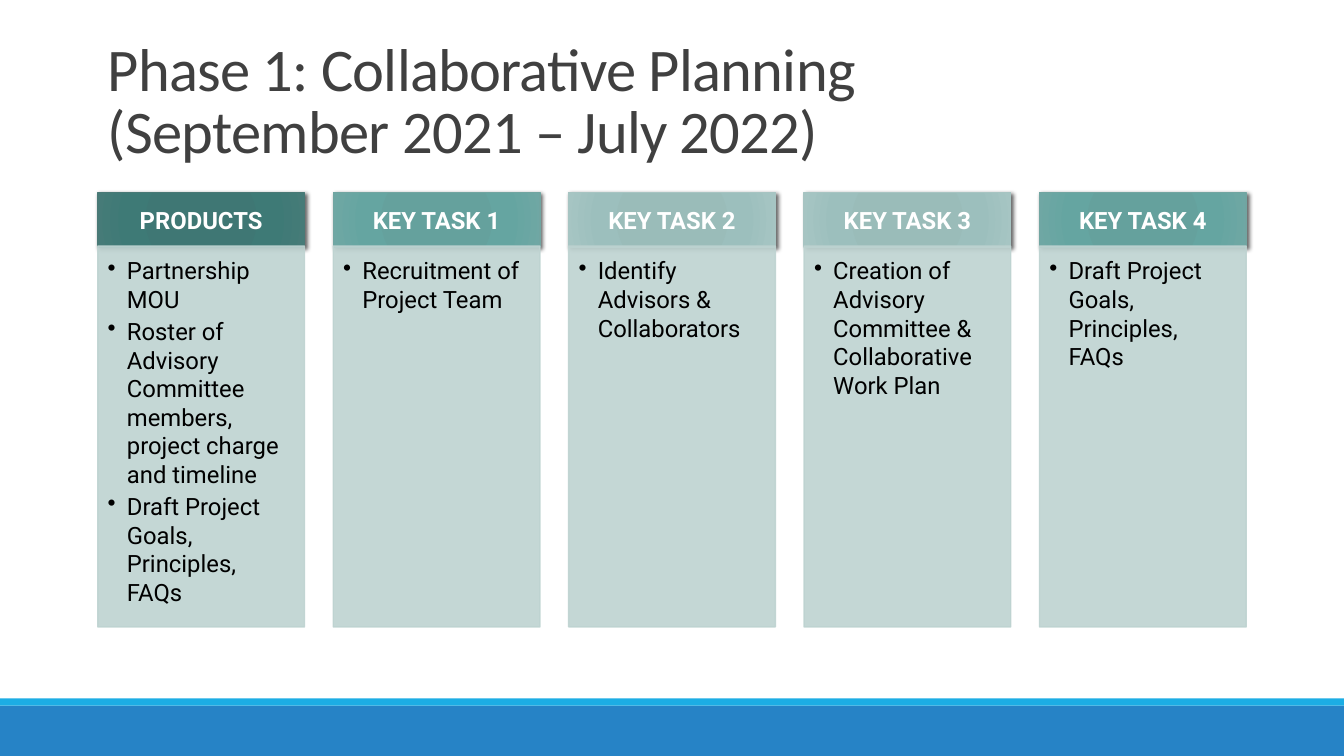
import pptx
import pptx.util
import pptx.dml.color
import pptx.enum.shapes
import pptx.enum.text
import pptx.oxml
import pptx.oxml.ns

Inches, Pt = pptx.util.Inches, pptx.util.Pt
Align, Anchor = pptx.enum.text.PP_ALIGN, pptx.enum.text.MSO_ANCHOR

TITLE = ["Phase 1: Collaborative Planning", "(September 2021 – July 2022)"]
COLUMNS = [
    ("PRODUCTS", "dark", [
        "Partnership MOU",
        "Roster of Advisory Committee members, project charge and timeline",
        "Draft Project Goals, Principles, FAQs"]),
    ("KEY TASK 1", "mid", ["Recruitment of Project Team"]),
    ("KEY TASK 2", "light", ["Identify Advisors & Collaborators"]),
    ("KEY TASK 3", "light", [
        "Creation of Advisory Committee & Collaborative Work Plan"]),
    ("KEY TASK 4", "mid", ["Draft Project Goals, Principles, FAQs"]),
]
BANDS = [(7, 0.5, "2683C6"), (6.93, 0.07, "1CADE4")]

THEME = {
    "title": {"font": "Calibri", "size": 43.2, "color": "404040"},
    "head": {"font": "Roboto", "size": 17, "color": "FFFFFF", "bold": True},
    "body": {"font": "Roboto", "size": 17, "color": "000000"},
    "panel": "BED3D1",
    "stops": (0, 34, 70, 100),
    # four gradient colours, then the outline
    "dark": ("3D7773", "3F7774", "3E7A76", "467B78", "497976"),
    "mid": ("63A19D", "65A19D", "65A5A1", "6FA7A4", "71A5A1"),
    "light": ("98BBB8", "9ABCB9", "9CBFBD", "A6C5C3", "A7C4C2"),
}
LEFT, STEP, WIDTH = 0.97, 2.335, 2.05
HEAD_TOP, HEAD_HIGH = 1.91, 0.54
BODY_TOP, BODY_HIGH = 2.44, 3.78
NS = pptx.oxml.ns.nsdecls("a")


def rgb(code):
    return pptx.dml.color.RGBColor.from_string(code)


def write(shape, items, font, size, color, bold=False, align=Align.LEFT,
          anchor=Anchor.TOP, inset=(0.1, 0.05, 0.1, 0.05), after=0,
          lead=1.0, track=None, bullet=False):
    """Put one paragraph per item in the shape; a list item is broken lines."""
    frame = shape.text_frame
    frame.word_wrap = True
    frame.vertical_anchor = anchor
    (frame.margin_left, frame.margin_top,
     frame.margin_right, frame.margin_bottom) = map(Inches, inset)
    for i, item in enumerate(items):
        para = frame.add_paragraph() if i else frame.paragraphs[0]
        para.alignment = align
        para.line_spacing = lead
        para.space_after = Pt(after)
        lines = item if isinstance(item, list) else [item]
        for j, line in enumerate(lines):
            if j:
                para.add_line_break()
            run = para.add_run()
            run.text = line
            run.font.name, run.font.size = font, Pt(size)
            run.font.bold, run.font.color.rgb = bold, rgb(color)
            if track is not None:
                run.font._element.set("spc", str(int(track * 100)))
        if bullet:
            props = para._p.get_or_add_pPr()
            props.set("marL", str(Inches(0.19)))
            props.set("indent", str(-Inches(0.19)))
            props.append(pptx.oxml.parse_xml(f'<a:buChar {NS} char="•"/>'))


def box(slide, left, top, width, high, fill=None, line=None):
    shape = slide.shapes.add_shape(
        pptx.enum.shapes.MSO_SHAPE.RECTANGLE,
        *map(Inches, (left, top, width, high)))
    shape.shadow.inherit = False
    if fill:
        shape.fill.solid()
        shape.fill.fore_color.rgb = rgb(fill)
    if line:
        shape.line.color.rgb = rgb(line)
        shape.line.width = Pt(1)
    else:
        shape.line.fill.background()
    return shape


def glow(shape, colors):
    """Give the shape a round gradient and a soft drop shadow."""
    stops = "".join(
        f'<a:gs pos="{pos * 1000}"><a:srgbClr val="{color}"/></a:gs>'
        for pos, color in zip(THEME["stops"], colors))
    props = shape._element.spPr
    props.insert(2, pptx.oxml.parse_xml(
        f'<a:gradFill {NS} rotWithShape="1"><a:gsLst>{stops}</a:gsLst>'
        '<a:path path="circle"><a:fillToRect l="100000" t="100000" '
        'r="100000" b="100000"/></a:path></a:gradFill>'))
    props.find(pptx.oxml.ns.qn("a:effectLst")).append(pptx.oxml.parse_xml(
        f'<a:outerShdw {NS} blurRad="{Pt(3)}" dist="{Pt(2)}" dir="2700000" '
        'algn="br" rotWithShape="0"><a:srgbClr val="000000">'
        '<a:alpha val="60000"/></a:srgbClr></a:outerShdw>'))


def fade(shape, part):
    for color in shape._element.spPr.iter(pptx.oxml.ns.qn("a:srgbClr")):
        color.append(pptx.oxml.parse_xml(
            f'<a:alpha {NS} val="{part * 1000}"/>'))


def main():
    deck = pptx.Presentation()
    deck.slide_width, deck.slide_height = Inches(13.33), Inches(7.5)
    slide = deck.slides.add_slide(deck.slide_layouts[6])

    for top, high, color in BANDS:
        box(slide, 0, top, 13.33, high, color)

    title = slide.shapes.add_textbox(
        *map(Inches, (LEFT, 1.01, 12.23, 0.68)))
    write(title, [TITLE], anchor=Anchor.BOTTOM, lead=0.85, track=-0.5,
          **THEME["title"])

    for i, (name, tone, items) in enumerate(COLUMNS):
        left = LEFT + i * STEP
        head = box(slide, left, HEAD_TOP, WIDTH, HEAD_HIGH,
                   line=THEME[tone][-1])
        glow(head, THEME[tone][:-1])
        write(head, [name], align=Align.CENTER, anchor=Anchor.MIDDLE,
              inset=(0.13, 0.08, 0.13, 0.08), **THEME["head"])
        body = box(slide, left, BODY_TOP, WIDTH, BODY_HIGH,
                   THEME["panel"], THEME["panel"])
        fade(body, 90)
        write(body, items, inset=(0.1, 0.1, 0.13, 0.15), after=2.5,
              bullet=True, **THEME["body"])

    deck.save("out.pptx")


if __name__ == "__main__":
    main()
